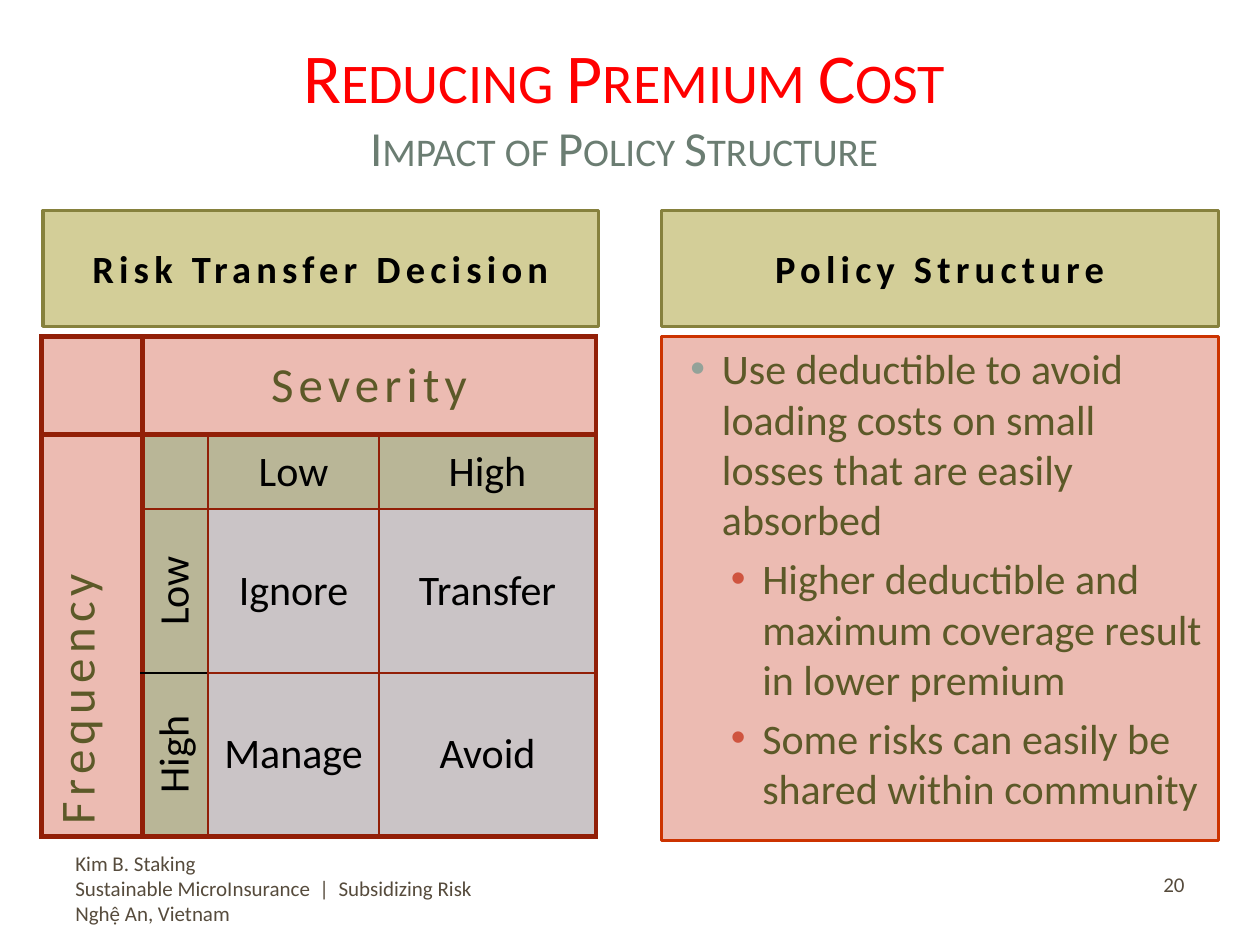
from lxml import etree
from pptx import Presentation
from pptx.dml.color import RGBColor
from pptx.enum import text
from pptx.oxml import ns
from pptx.util import Inches, Pt

FONT = "Calibri"
RED = RGBColor(0xFF, 0x00, 0x00)
SLATE = RGBColor(0x6B, 0x7D, 0x72)
BLACK = RGBColor(0x00, 0x00, 0x00)
BROWN = RGBColor(0x56, 0x4B, 0x3C)
OLIVE_TEXT = RGBColor(0x5C, 0x59, 0x28)
KHAKI = RGBColor(0xD3, 0xCE, 0x98)
KHAKI_LINE = RGBColor(0x86, 0x81, 0x3D)
PINK = RGBColor(0xEC, 0xBB, 0xB2)
PINK_LINE = RGBColor(0xCC, 0x33, 0x00)
SAGE = RGBColor(0xB9, 0xB6, 0x97)
GRAY = RGBColor(0xCA, 0xC4, 0xC6)
MAROON = RGBColor(0x92, 0x1F, 0x07)
BULLET_COLORS = [RGBColor(0x93, 0xA2, 0x99), RGBColor(0xCF, 0x54, 0x3F)]
BULLET_INDENTS = [Inches(0.38), Inches(0.7)]

MIDDLE = text.MSO_ANCHOR.MIDDLE
CENTER = text.PP_ALIGN.CENTER
MATRIX = [
    ["", "Severity", "", ""],
    ["Frequency", "", "Low", "High"],
    ["", "Low", "Ignore", "Transfer"],
    ["", "High", "Manage", "Avoid"],
]


def format_run(run, size, color, bold=False, spacing=0, small_caps=False):
    font = run.font
    font.name, font.size, font.bold = FONT, Pt(size), bold
    font.color.rgb = color
    properties = run._r.get_or_add_rPr()
    if spacing:
        properties.set("spc", str(spacing * 100))
    if small_caps:
        properties.set("cap", "small")


def place(shape, left, top, width, height):
    shape.left, shape.top = Inches(left), Inches(top)
    shape.width, shape.height = Inches(width), Inches(height)


def paint(shape, fill, line):
    shape.fill.solid()
    shape.fill.fore_color.rgb = fill
    shape.line.color.rgb = line
    shape.line.width = Pt(2)


def add_title(title, box):
    place(title, *box)
    frame = title.text_frame
    frame.text = "Reducing Premium Cost\vImpact of Policy Structure"
    frame.vertical_anchor = MIDDLE
    frame.auto_size = text.MSO_AUTO_SIZE.NONE
    paragraph = frame.paragraphs[0]
    paragraph.alignment = CENTER
    for run, size, color in zip(paragraph.runs, (40, 28), (RED, SLATE)):
        format_run(run, size, color, small_caps=True)


def add_heading(placeholder, box, wording):
    place(placeholder, *box)
    paint(placeholder, KHAKI, KHAKI_LINE)
    frame = placeholder.text_frame
    frame.text = wording
    frame.vertical_anchor = MIDDLE
    frame.auto_size = text.MSO_AUTO_SIZE.NONE
    frame.paragraphs[0].alignment = CENTER
    format_run(frame.paragraphs[0].runs[0], 22, BLACK, bold=True, spacing=3)


def set_bullet(paragraph, level):
    properties = paragraph._p.get_or_add_pPr()
    properties.set("marL", str(BULLET_INDENTS[level]))
    properties.set("indent", str(-Inches(0.25)))
    color = etree.SubElement(properties, ns.qn("a:buClr"))
    etree.SubElement(color, ns.qn("a:srgbClr"), val=str(BULLET_COLORS[level]))
    etree.SubElement(properties, ns.qn("a:buFont"), typeface="Arial")
    etree.SubElement(properties, ns.qn("a:buChar"), char="•")


def add_policy_list(placeholder, box, items):
    place(placeholder, *box)
    paint(placeholder, PINK, PINK_LINE)
    frame = placeholder.text_frame
    frame.text = "\n".join(wording for level, wording in items)
    frame.auto_size = text.MSO_AUTO_SIZE.NONE
    for paragraph, (level, wording) in zip(frame.paragraphs, items):
        paragraph.level = level
        paragraph.space_before = Pt(4.8)
        set_bullet(paragraph, level)
        format_run(paragraph.runs[0], 24, OLIVE_TEXT)


def set_border(cell, side, color, width):
    line = etree.SubElement(cell._tc.get_or_add_tcPr(), ns.qn("a:ln" + side),
                            w=str(Pt(width)))
    fill = etree.SubElement(line, ns.qn("a:solidFill"))
    etree.SubElement(fill, ns.qn("a:srgbClr"), val=str(color))


def style_borders(cell, row, column):
    """Thick lines frame the table and its headers; thin ones divide the grid."""
    edges = {"L": column, "R": column + 1, "T": row, "B": row + 1}
    for side, edge in edges.items():
        thick = row == 0 or column == 0 or edge in (0, 1, 4)
        if column == 1 and (row, side) in ((2, "B"), (3, "T")):
            set_border(cell, side, BLACK, 1)
        else:
            set_border(cell, side, MAROON, 3 if thick else 1.5)


def style_cell(cell, row, column, wording):
    header = row == 0 or column == 0
    label = row == 1 or column == 1
    vertical = row > 0 and column < 2
    style_borders(cell, row, column)
    cell.fill.solid()
    cell.fill.fore_color.rgb = PINK if header else SAGE if label else GRAY
    if not wording:
        return
    cell.text = wording
    if vertical:
        cell._tc.get_or_add_tcPr().set("vert", "vert270")
    if header or not vertical:
        cell.vertical_anchor = MIDDLE
    paragraph = cell.text_frame.paragraphs[0]
    if column > 0:
        paragraph.alignment = CENTER
    if header:
        format_run(paragraph.runs[0], 28, OLIVE_TEXT, spacing=3)
    else:
        format_run(paragraph.runs[0], 24, BLACK)


def add_risk_matrix(slide, box):
    frame = slide.shapes.add_table(4, 4, *map(Inches, box))
    table = frame.table
    for column, width in zip(table.columns, (0.8, 0.52, 1.36, 1.72)):
        column.width = Inches(width)
    for row, height in zip(table.rows, (0.78, 0.59, 1.3, 1.3)):
        row.height = Inches(height)
    table.cell(0, 1).merge(table.cell(0, 3))
    table.cell(1, 0).merge(table.cell(3, 0))
    for row, wordings in enumerate(MATRIX):
        for column, wording in enumerate(wordings):
            style_cell(table.cell(row, column), row, column, wording)


def add_footer(slide, box, wording, alignment):
    frame = slide.shapes.add_textbox(*map(Inches, box)).text_frame
    frame.word_wrap = True
    frame.vertical_anchor = MIDDLE
    frame.text = wording
    for paragraph in frame.paragraphs:
        paragraph.alignment = alignment
        format_run(paragraph.runs[0], 12, BROWN)


def main():
    presentation = Presentation()
    presentation.slide_width, presentation.slide_height = Inches(10), Inches(7.5)
    slide = presentation.slides.add_slide(presentation.slide_layouts[4])
    title, left_heading, left_body, right_heading, right_body = slide.placeholders
    left_body.element.getparent().remove(left_body.element)

    add_title(title, (0.33, 0.17, 9.25, 1.33))
    add_heading(left_heading, (0.34, 1.67, 4.41, 0.92), "Risk Transfer Decision")
    add_heading(right_heading, (5.25, 1.67, 4.42, 0.92), "Policy Structure")
    add_policy_list(right_body, (5.25, 2.67, 4.42, 4), [
        (0, "Use deductible to avoid loading costs on small losses "
            "that are easily absorbed"),
        (1, "Higher deductible and maximum coverage result in lower premium"),
        (1, "Some risks can easily be shared within community"),
    ])
    add_risk_matrix(slide, (0.33, 2.67, 4.4, 3.97))
    add_footer(slide, (0.5, 6.7, 4.5, 0.7),
               "Kim B. Staking\nSustainable MicroInsurance  |  Subsidizing Risk\n"
               "Nghệ An, Vietnam", text.PP_ALIGN.LEFT)
    add_footer(slide, (7.17, 6.82, 2.33, 0.4), "20", text.PP_ALIGN.RIGHT)
    presentation.save("out.pptx")


if __name__ == "__main__":
    main()
